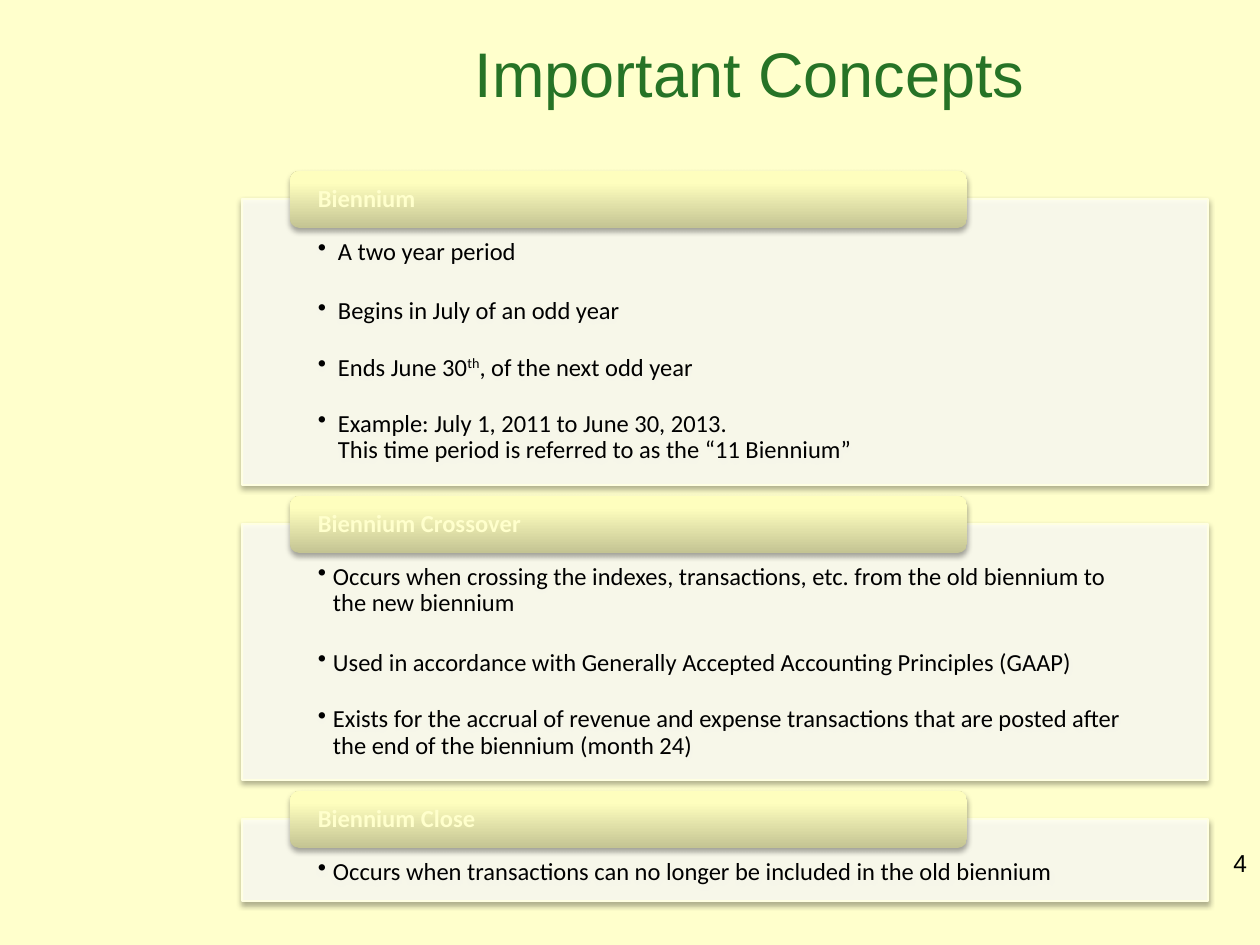
from lxml import etree
from pptx import Presentation
from pptx.dml.color import RGBColor
from pptx.enum.shapes import MSO_SHAPE as Shape
from pptx.enum.text import MSO_ANCHOR as Anchor, PP_ALIGN as Align
from pptx.oxml import parse_xml
from pptx.oxml.ns import nsdecls, qn
from pptx.util import Pt

PX = 914400 / 126
COLORS = {
    "background": "FFFFCC", "title": "267326", "text": "000000",
    "panel": "FFFFF4", "panel_line": "FFFFE2", "heading": "FFFFCC",
    "tab_dark": "C4C493", "tab_mid": "FEFEBE", "tab_light": "FFFFC0",
    "shadow": "000000",
}
TAB_STOPS = [(0, "tab_dark"), (80, "tab_mid"), (100, "tab_light")]

PANEL_LEFT, PANEL_WIDTH, FIRST_TOP, PANEL_GAP = 242, 966, 199, 39
TAB_LEFT, TAB_WIDTH, TAB_HEIGHT = 290, 677, 57

# heading, panel height, bullet indent, bullets (^ encloses superscript)
CONCEPTS = [
    ("Biennium", 286, 20, [
        "A two year period",
        "Begins in July of an odd year",
        "Ends June 30^th^, of the next odd year",
        "Example: July 1, 2011 to June 30, 2013.\v"
        "This time period is referred to as the “11 Biennium”",
    ]),
    ("Biennium Crossover", 256, 15, [
        "Occurs when crossing the indexes, transactions, etc. from the old "
        "biennium to the new biennium",
        "Used in accordance with Generally Accepted Accounting Principles (GAAP)",
        "Exists for the accrual of revenue and expense transactions that are "
        "posted after the end of the biennium (month 24)",
    ]),
    ("Biennium Close", 82, 15, [
        "Occurs when transactions can no longer be included in the old biennium",
    ]),
]


def emu(px):
    return round(px * PX)


def rgb(name):
    return RGBColor.from_string(COLORS[name])


class ConceptSlide:
    def __init__(self, slide):
        self.slide = slide
        fill = slide.background.fill
        fill.solid()
        fill.fore_color.rgb = rgb("background")

    def set_font(self, paragraph, color, size=14, name="Calibri", bold=False):
        font = paragraph.font
        font.name, font.size, font.bold = name, Pt(size), bold
        font.color.rgb = rgb(color)

    def set_frame(self, frame, margins, anchor):
        frame.word_wrap = True
        frame.vertical_anchor = anchor
        (frame.margin_left, frame.margin_top,
         frame.margin_right, frame.margin_bottom) = map(emu, margins)

    def add_label(self, text, box, color, size, align, anchor):
        label = self.slide.shapes.add_textbox(*map(emu, box))
        self.set_frame(label.text_frame, (13, 6, 13, 6), anchor)
        paragraph = label.text_frame.paragraphs[0]
        paragraph.text = text
        paragraph.alignment = align
        self.set_font(paragraph, color, size, "Arial")

    def add_shadow(self, shape):
        shape.shadow.inherit = False
        effects = shape._element.spPr.find(qn("a:effectLst"))
        effects.append(parse_xml(
            f'<a:outerShdw {nsdecls("a")} blurRad="40000" dist="23000" '
            f'dir="5400000" rotWithShape="0"><a:srgbClr val="{COLORS["shadow"]}">'
            '<a:alpha val="35000"/></a:srgbClr></a:outerShdw>'))

    def add_bullet(self, paragraph, text, indent):
        properties = paragraph._p.get_or_add_pPr()
        properties.set("marL", str(emu(indent)))
        properties.set("indent", str(-emu(indent)))
        etree.SubElement(properties, qn("a:buChar"), char="•")
        paragraph.alignment = Align.LEFT
        paragraph.line_spacing = 0.9
        if "^" in text:
            for index, part in enumerate(text.split("^")):
                run = paragraph.add_run()
                run.text = part
                if index % 2:
                    run._r.get_or_add_rPr().set("baseline", "30000")
        else:
            paragraph.text = text
        self.set_font(paragraph, "text")

    def add_panel(self, top, height, indent, bullets):
        panel = self.slide.shapes.add_shape(
            Shape.RECTANGLE, *map(emu, (PANEL_LEFT, top, PANEL_WIDTH, height)))
        panel.fill.solid()
        panel.fill.fore_color.rgb = rgb("panel")
        fill_color = panel._element.spPr.find(".//" + qn("a:srgbClr"))
        etree.SubElement(fill_color, qn("a:alpha"), val="90000")
        panel.line.color.rgb = rgb("panel_line")
        panel.line.width = Pt(0.75)
        self.add_shadow(panel)

        frame = panel.text_frame
        self.set_frame(frame, (76, 40, 76, 14), Anchor.TOP)
        for index, text in enumerate(bullets):
            paragraph = frame.add_paragraph() if index else frame.paragraphs[0]
            self.add_bullet(paragraph, text, indent)
            if index:
                paragraph.space_before = Pt(19 if index == 1 else 17)

    def add_tab(self, heading, top):
        tab = self.slide.shapes.add_shape(
            Shape.ROUNDED_RECTANGLE, *map(emu, (TAB_LEFT, top, TAB_WIDTH, TAB_HEIGHT)))
        stops = "".join(
            f'<a:gs pos="{position * 1000}"><a:srgbClr val="{COLORS[color]}"/></a:gs>'
            for position, color in TAB_STOPS)
        tab._element.spPr.find(qn("a:prstGeom")).addnext(parse_xml(
            f'<a:gradFill {nsdecls("a")} rotWithShape="1"><a:gsLst>{stops}</a:gsLst>'
            '<a:lin ang="16200000" scaled="0"/></a:gradFill>'))
        tab.line.fill.background()
        self.add_shadow(tab)

        self.set_frame(tab.text_frame, (25, 0, 25, 0), Anchor.MIDDLE)
        paragraph = tab.text_frame.paragraphs[0]
        paragraph.text = heading
        paragraph.alignment = Align.LEFT
        paragraph.line_spacing = 0.9
        self.set_font(paragraph, "heading", bold=True)


def main():
    deck = Presentation()
    deck.slide_width, deck.slide_height = emu(1260), emu(945)
    page = ConceptSlide(deck.slides.add_slide(deck.slide_layouts[6]))
    page.add_label("Important Concepts", (462, 0, 798, 145), "title", 36,
                   Align.LEFT, Anchor.MIDDLE)
    top = FIRST_TOP
    for heading, height, indent, bullets in CONCEPTS:
        page.add_panel(top, height, indent, bullets)
        page.add_tab(heading, top - TAB_HEIGHT // 2)
        top += height + PANEL_GAP
    page.add_label("4", (1197, 842, 63, 50), "text", 14, Align.RIGHT, Anchor.TOP)
    deck.save("out.pptx")


if __name__ == "__main__":
    main()
